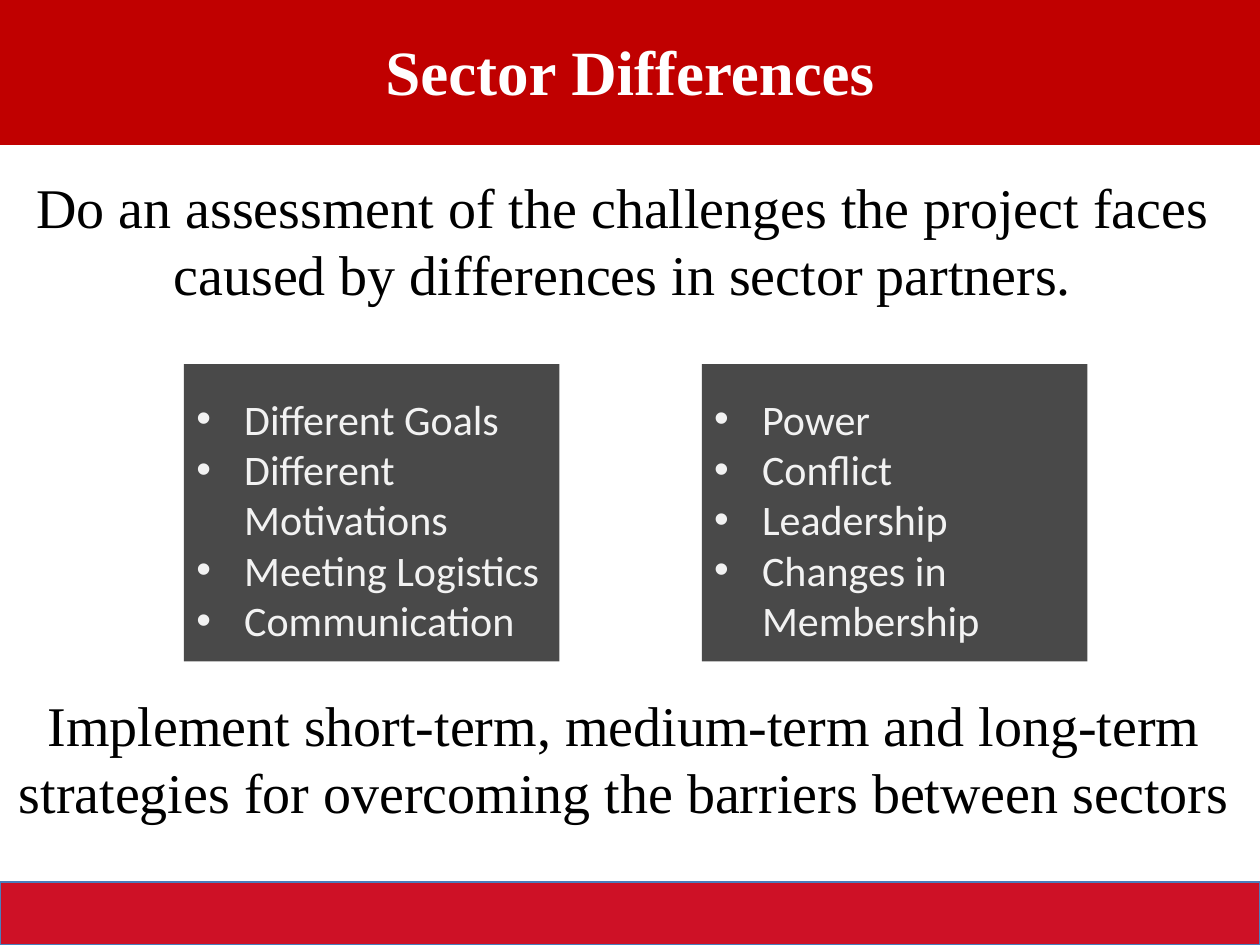
from lxml.etree import SubElement
from pptx import Presentation
from pptx.dml.color import RGBColor
from pptx.enum.shapes import MSO_SHAPE
from pptx.enum.text import MSO_ANCHOR, PP_ALIGN
from pptx.oxml.ns import qn
from pptx.util import Inches, Pt

COLORS = {
    "header": "C00000",
    "footer": "CE1126",
    "footer_edge": "4B7EBC",
    "panel": "0D0D0D",
    "panel_text": "F2F2F2",
    "body": "000000",
    "title": "FFFFFF",
}
SERIF, SANS = "Times New Roman", "Calibri"
CELL = 0.1  # inches: the slide is 100 columns by 75 rows
BULLET_INDENT = 0.38


def rgb(name):
    return RGBColor.from_string(COLORS[name])


def write_text(frame, lines, *, size, color, font=SERIF, bold=False,
               align=PP_ALIGN.CENTER, anchor=MSO_ANCHOR.TOP, wrap=True,
               top_inset=0.05, bullet=None):
    frame.word_wrap = wrap
    frame.vertical_anchor = anchor
    frame.margin_top = Inches(top_inset)
    for index, line in enumerate(lines):
        paragraph = frame.add_paragraph() if index else frame.paragraphs[0]
        paragraph.alignment = align
        if bullet:
            add_bullet(paragraph, bullet)
        run = paragraph.add_run()
        run.text = line
        run.font.name = font
        run.font.size = Pt(size)
        run.font.bold = bold
        run.font.color.rgb = rgb(color)


def add_bullet(paragraph, character):
    properties = paragraph._p.get_or_add_pPr()
    properties.set("marL", str(Inches(BULLET_INDENT)))
    properties.set("indent", str(-Inches(BULLET_INDENT)))
    SubElement(properties, qn("a:buFont")).set("typeface", "Arial")
    SubElement(properties, qn("a:buChar")).set("char", character)


class SectorSlide:
    def __init__(self, presentation):
        self.slide = presentation.slides.add_slide(presentation.slide_layouts[6])

    def place(self, *cells):
        return [Inches(cell * CELL) for cell in cells]

    def bar(self, column, row, columns, rows, fill, edge=None, opacity=None):
        bar = self.slide.shapes.add_shape(
            MSO_SHAPE.RECTANGLE, *self.place(column, row, columns, rows))
        bar.shadow.inherit = False
        bar.fill.solid()
        bar.fill.fore_color.rgb = rgb(fill)
        if opacity:
            color = bar.fill._xPr.find(qn("a:solidFill"))[0]
            SubElement(color, qn("a:alpha")).set("val", str(opacity * 1000))
        if edge:
            bar.line.color.rgb = rgb(edge)
            bar.line.width = Pt(0.75)
        else:
            bar.line.fill.background()
        return bar

    def title(self, text):
        header = self.bar(0, -0.3, 100, 11.8, "header")
        write_text(header.text_frame, [text], size=36, color="title",
                   bold=True, anchor=MSO_ANCHOR.MIDDLE)

    def statement(self, column, row, columns, lines, wrap=True):
        box = self.slide.shapes.add_textbox(
            *self.place(column, row, columns, 11.8))
        write_text(box.text_frame, lines, size=32, color="body", wrap=wrap)

    def challenge_panel(self, column, columns, challenges):
        panel = self.bar(column, 28.9, columns, 23.6, "panel", opacity=75)
        write_text(panel.text_frame, challenges, size=24, color="panel_text",
                   font=SANS, align=PP_ALIGN.LEFT, top_inset=0.23, bullet="•")


def main():
    presentation = Presentation()
    presentation.slide_width, presentation.slide_height = Inches(10), Inches(7.5)

    sectors = SectorSlide(presentation)
    sectors.bar(0, 70, 100, 5, "footer", edge="footer_edge")
    sectors.title("Sector Differences")
    sectors.statement(1.4, 13.2, 97.2, [
        "Do an assessment of the challenges the project faces ",
        "caused by differences in sector partners. ",
    ], wrap=False)
    sectors.challenge_panel(14.6, 29.8, [
        "Different Goals", "Different Motivations",
        "Meeting Logistics", "Communication"])
    sectors.challenge_panel(55.7, 30.6, [
        "Power", "Conflict", "Leadership", "Changes in Membership"])
    sectors.statement(0.5, 54.3, 98.1, [
        "Implement short-term, medium-term and long-term strategies "
        "for overcoming the barriers between sectors "])

    presentation.save("out.pptx")


if __name__ == "__main__":
    main()
